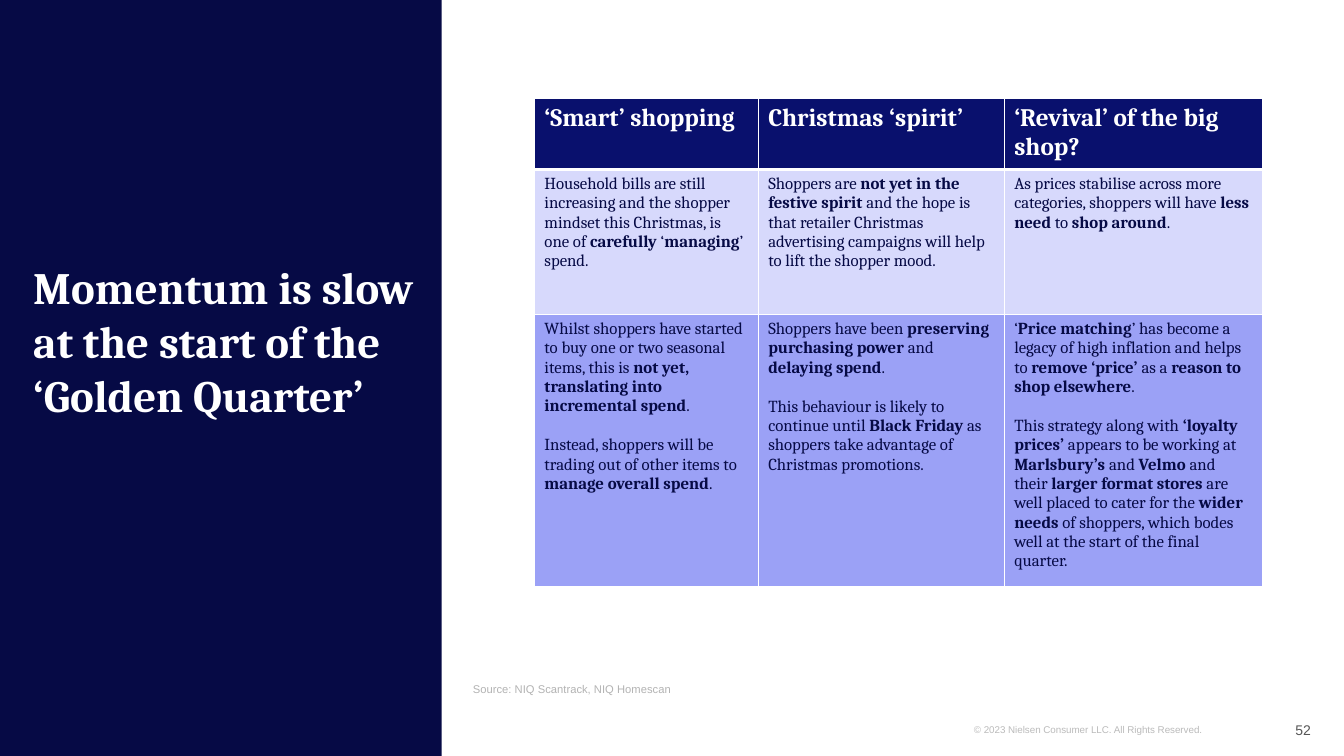
import pptx
import pptx.util
import pptx.dml.color
import pptx.enum.shapes
import pptx.enum.text
import pptx.oxml
from dataclasses import dataclass
from pptx.util import Inches


@dataclass(frozen=True)
class Theme:
    serif: str = "Cambria"
    sans: str = "Arial"
    white: str = "FFFFFF"
    navy: str = "060A45"
    header: str = "09106D"
    row_fills: tuple = ("09106D", "D7D9FC", "9BA1F6")
    copyright: str = "BBBBBB"
    page: str = "555555"
    source: str = "B3B3B3"
    title_size: int = 32
    header_size: int = 18
    body_size: int = 12
    page_size: int = 10
    source_size: int = 8
    copyright_size: int = 7


theme = Theme()
Align = pptx.enum.text.PP_ALIGN
Anchor = pptx.enum.text.MSO_ANCHOR


def style(paragraph, face, size, color, bold=None):
    paragraph.font.name = face
    paragraph.font.size = pptx.util.Pt(size)
    paragraph.font.color.rgb = pptx.dml.color.RGBColor.from_string(color)
    paragraph.font.bold = bold


def add_text(box, text, face, size, color, bold=False, anchor=Anchor.TOP, align=Align.LEFT):
    frame = slide.shapes.add_textbox(*[Inches(side) for side in box]).text_frame
    frame.word_wrap = True
    frame.margin_left = frame.margin_right = 0
    frame.vertical_anchor = anchor
    paragraph = frame.paragraphs[0]
    paragraph.text = text
    paragraph.alignment = align
    style(paragraph, face, size, color, bold)


presentation = pptx.Presentation()
presentation.slide_width = Inches(13.33)
presentation.slide_height = Inches(7.5)
slide = presentation.slides.add_slide(presentation.slide_layouts[6])

title_panel = slide.shapes.add_shape(
    pptx.enum.shapes.MSO_SHAPE.RECTANGLE, 0, 0, Inches(4.38), Inches(7.5))
title_panel.shadow.inherit = False
title_panel.fill.solid()
title_panel.fill.fore_color.rgb = pptx.dml.color.RGBColor.from_string(theme.navy)
title_panel.line.fill.background()

add_text((9.66, 7.13, 2.84, 0.22), "© 2023 Nielsen Consumer LLC. All Rights Reserved.",
         theme.sans, theme.copyright_size, theme.copyright)
add_text((12.01, 7.04, 0.99, 0.4), "52", theme.sans, theme.page_size, theme.page,
         anchor=Anchor.MIDDLE, align=Align.RIGHT)
add_text((0.33, 2.5, 3.83, 1.73), "Momentum is slow at the start of the ‘Golden Quarter’",
         theme.serif, theme.title_size, theme.white, bold=True, anchor=Anchor.BOTTOM)
add_text((4.69, 6.55, 8.31, 0.4), "Source: NIQ Scantrack, NIQ Homescan",
         theme.sans, theme.source_size, theme.source, anchor=Anchor.BOTTOM)

insights = [
    [["‘Smart’ shopping"], ["Christmas ‘spirit’"], ["‘Revival’ of the big shop?"]],
    [
        ["Household bills are still increasing and the shopper mindset this Christmas, "
         "is one of **carefully** ‘**managing**’ spend."],
        ["Shoppers are **not yet in the festive spirit** and the hope is that retailer "
         "Christmas advertising campaigns will help to lift the shopper mood."],
        ["As prices stabilise across more categories, shoppers will have **less need** "
         "to **shop around**."],
    ],
    [
        ["Whilst shoppers have started to buy one or two seasonal items, this is "
         "**not yet, translating into incremental spend**.",
         "Instead, shoppers will be trading out of other items to **manage overall spend**."],
        ["Shoppers have been **preserving purchasing power** and **delaying spend**.",
         "This behaviour is likely to continue until **Black Friday** as shoppers take "
         "advantage of Christmas promotions."],
        ["‘**Price matching**’ has become a legacy of high inflation and helps to "
         "**remove ‘price’** as a **reason to shop elsewhere**.",
         "This strategy along with **‘loyalty prices’** appears to be working at "
         "**Marlsbury’s** and **Velmo** and their **larger format stores** are well placed "
         "to cater for the **wider needs** of shoppers, which bodes well at the start of "
         "the final quarter."],
    ],
]
column_widths = [2.22, 2.44, 2.56]
row_heights = [0.67, 1.44, 2.6]

table = slide.shapes.add_table(
    len(row_heights), len(column_widths), Inches(5.3), Inches(0.98),
    Inches(sum(column_widths)), Inches(sum(row_heights))).table
for column, width in zip(table.columns, column_widths):
    column.width = Inches(width)
for row, height in zip(table.rows, row_heights):
    row.height = Inches(height)

for row_index, row_texts in enumerate(insights):
    is_header = row_index == 0
    size = theme.header_size if is_header else theme.body_size
    color = theme.white if is_header else theme.navy
    for column_index, passages in enumerate(row_texts):
        cell = table.cell(row_index, column_index)
        for passage_index, passage in enumerate(passages):
            if passage_index == 0:
                paragraph = cell.text_frame.paragraphs[0]
            else:
                paragraph = cell.text_frame.add_paragraph()
                paragraph.space_before = pptx.util.Pt(14)
            style(paragraph, theme.serif, size, color, is_header)
            for part_index, part in enumerate(passage.split("**")):
                if part:
                    run = paragraph.add_run()
                    run.text = part
                    run.font.bold = is_header or part_index % 2 == 1

        border_widths = {"lnL": 1, "lnR": 1, "lnT": 3 if row_index == 1 else 1,
                         "lnB": 3 if is_header else 1}
        for edge, width in border_widths.items():
            cell._tc.get_or_add_tcPr().append(pptx.oxml.parse_xml(
                f'<a:{edge} xmlns:a="http://schemas.openxmlformats.org/drawingml/2006/main" '
                f'w="{pptx.util.Pt(width)}"><a:solidFill><a:srgbClr val="{theme.white}"/>'
                f'</a:solidFill></a:{edge}>'))
        cell.fill.solid()
        cell.fill.fore_color.rgb = pptx.dml.color.RGBColor.from_string(theme.row_fills[row_index])

presentation.save("out.pptx")
